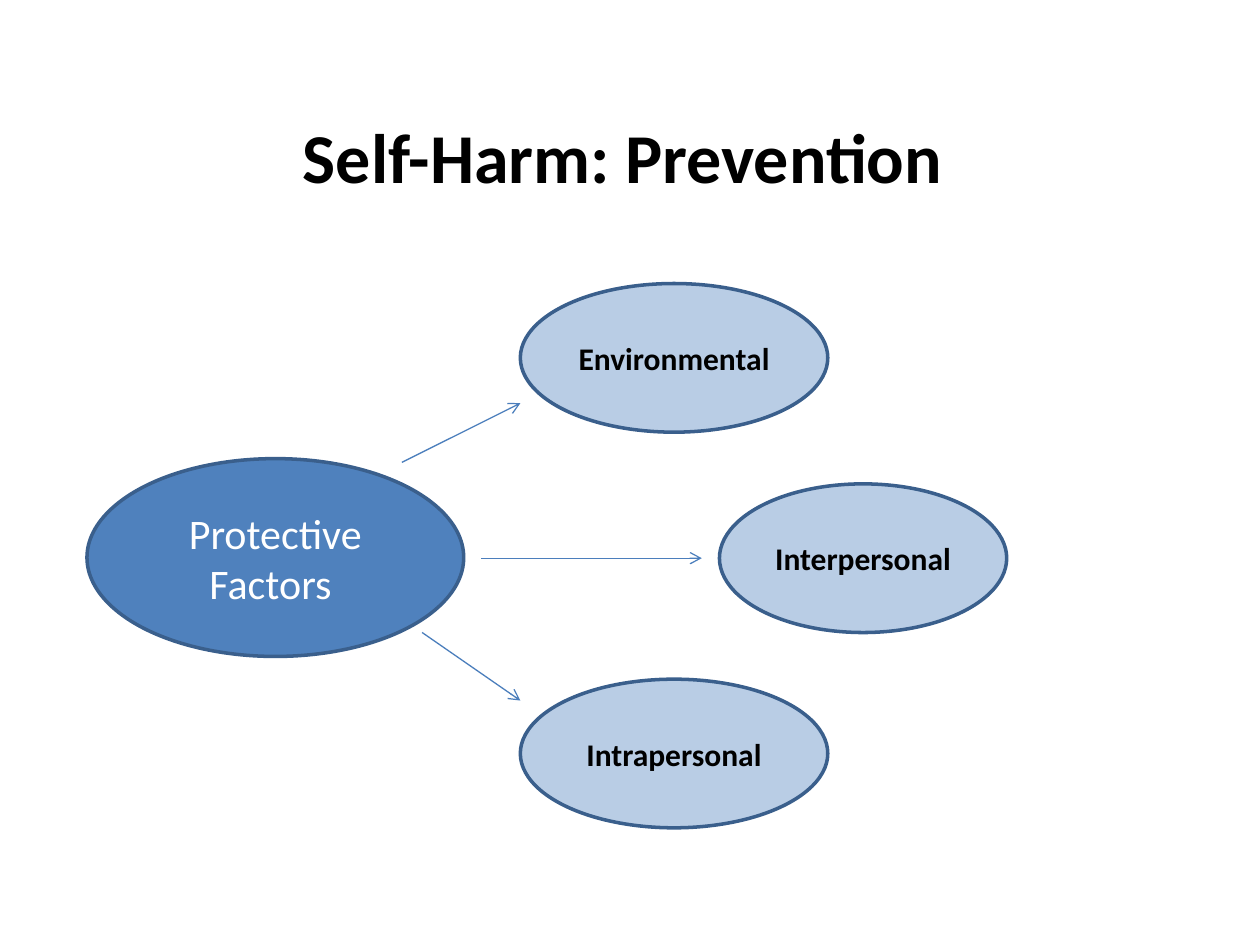
import pptx
import pptx.util
import pptx.dml.color
import pptx.enum.shapes
import pptx.enum.text
import pptx.oxml.ns
from lxml import etree

Inches = pptx.util.Inches

TITLE = ("Self-Harm: Prevention ", (0.28, 0.84, 9.45, 0.79))
HUB = ("Protective Factors ", (0.69, 3.64, 2.99, 1.57))
FACTOR_HEIGHT = 1.18
FACTORS = [
    ("Environmental", (4.13, 2.25, 2.44), ((3.19, 3.67), (4.13, 3.2))),
    ("Interpersonal ", (5.71, 3.84, 2.28), ((3.82, 4.43), (5.57, 4.43))),
    ("Intrapersonal", (4.13, 5.39, 2.44), ((3.35, 5.02), (4.13, 5.56))),
]

THEME = {
    "font": "Calibri",
    "title": {"size": 40, "color": "000000", "bold": True},
    "hub": {"size": 24, "color": "FFFFFF", "bold": False, "fill": "4F81BD"},
    "factor": {"size": 18, "color": "000000", "bold": True, "fill": "B9CDE5"},
    "outline": ("3A5F8C", 2),
    "arrow": ("4B7EBC", 0.75),
}


def rgb(value):
    return pptx.dml.color.RGBColor.from_string(value)


def set_line(line, style):
    color, width = style
    line.color.rgb = rgb(color)
    line.width = pptx.util.Pt(width)


def write(frame, text, style):
    frame.word_wrap = True
    frame.vertical_anchor = pptx.enum.text.MSO_ANCHOR.MIDDLE
    frame.text = text
    paragraph = frame.paragraphs[0]
    paragraph.alignment = pptx.enum.text.PP_ALIGN.CENTER
    font = paragraph.runs[0].font
    font.name = THEME["font"]
    font.size = pptx.util.Pt(style["size"])
    font.bold = style["bold"]
    font.color.rgb = rgb(style["color"])


def add_oval(slide, text, box, style):
    oval = slide.shapes.add_shape(
        pptx.enum.shapes.MSO_SHAPE.OVAL, *map(Inches, box))
    oval.shadow.inherit = False
    oval.fill.solid()
    oval.fill.fore_color.rgb = rgb(style["fill"])
    set_line(oval.line, THEME["outline"])
    write(oval.text_frame, text, style)


def add_arrow(slide, start, end):
    arrow = slide.shapes.add_connector(
        pptx.enum.shapes.MSO_CONNECTOR.STRAIGHT, *map(Inches, start + end))
    set_line(arrow.line, THEME["arrow"])
    qn = pptx.oxml.ns.qn
    etree.SubElement(arrow.line._get_or_add_ln(), qn("a:tailEnd"), type="arrow")
    etree.SubElement(arrow._element.spPr, qn("a:effectLst"))


def main():
    deck = pptx.Presentation()
    deck.slide_width, deck.slide_height = Inches(10), Inches(7.5)
    slide = deck.slides.add_slide(deck.slide_layouts[6])

    heading, heading_box = TITLE
    title = slide.shapes.add_textbox(*map(Inches, heading_box))
    write(title.text_frame, heading, THEME["title"])

    add_oval(slide, *HUB, THEME["hub"])
    for label, place, _ in FACTORS:
        add_oval(slide, label, place + (FACTOR_HEIGHT,), THEME["factor"])
    for _, _, (start, end) in FACTORS:
        add_arrow(slide, start, end)

    deck.save("out.pptx")


if __name__ == "__main__":
    main()
